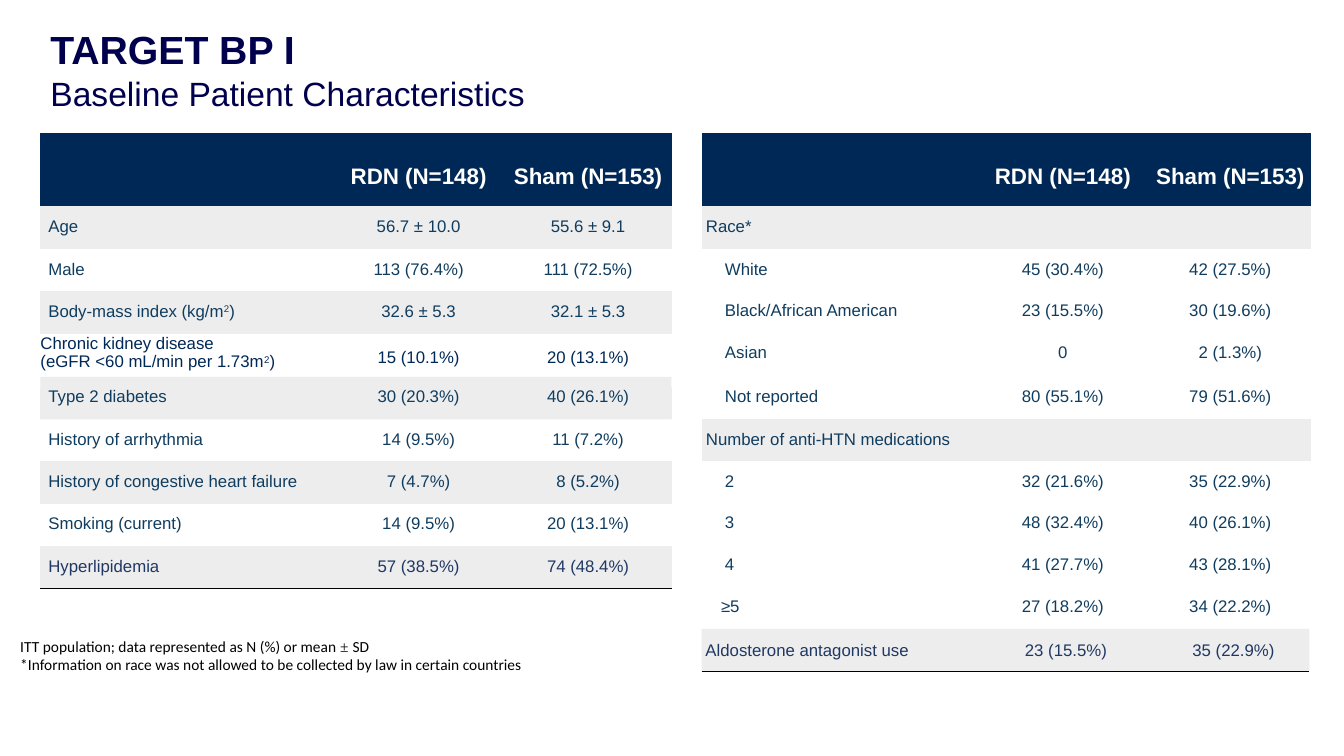
"""Build the baseline patient characteristics slide."""
from dataclasses import dataclass

from lxml.etree import SubElement
from pptx import Presentation
from pptx.dml.color import RGBColor
from pptx.enum.shapes import MSO_CONNECTOR, MSO_SHAPE
from pptx.enum.text import MSO_ANCHOR, PP_ALIGN
from pptx.oxml import parse_xml
from pptx.oxml.ns import nsdecls, qn
from pptx.slide import Slide
from pptx.table import Table, _Cell as Cell
from pptx.text.text import TextFrame, _Paragraph as Paragraph
from pptx.util import Cm, Pt

NAVY, TEAL, INDIGO, BAND = "002856", "103D5F", "203864", "EDEDED"
NO_GRID_STYLE = "{2D5ABB26-0587-4C30-8999-92F81FD0307C}"
COLUMN_WIDTHS = (7.14, 4.45, 4.32, 0.76, 6.81, 4.32, 4.22)
ROW_HEIGHTS = (1.85, 1.07, 1.07, 1.07, 1.35, 0.79, 1.07, 1.07, 1.07, 1.07, 0.76)
TABLE_LEFT, TABLE_TOP = 1.02, 3.35
LAST_LEFT_ROW = 9


@dataclass(frozen=True)
class Style:
    """Look of a paragraph; spans between bars take odd_face or are raised."""

    size: float
    color: str
    face: str = "Arial"
    bold: bool = False
    odd_face: str = ""


@dataclass(frozen=True)
class Row:
    """One line of a half table, lengths in centimetres."""

    label: str
    values: tuple[str, str] = ("", "")
    top: float = 0.28
    indent: float = 0.2
    band: bool = False
    label_color: str = TEAL
    value_color: str = TEAL


@dataclass(frozen=True)
class Half:
    """One side of the table."""

    column: int
    value_indents: tuple[float, float]
    rows: tuple[Row, ...]


@dataclass(frozen=True)
class Strip:
    """A grey band behind a line of text."""

    left: float
    top: float
    width: float
    height: float = 1.07


LEFT = Half(0, (0.33, 0.1), (
    Row("Age", ("56.7 ± 10.0", "55.6 ± 9.1"), band=True),
    Row("Male", ("113 (76.4%)", "111 (72.5%)")),
    Row("Body-mass index (kg/m|2|)", ("32.6 ± 5.3", "32.1 ± 5.3"), band=True),
    Row("Chronic kidney disease\n(eGFR <60 mL/min per 1.73m|2|)", ("15 (10.1%)", "20 (13.1%)"),
        top=0.36, indent=0, label_color=NAVY, value_color=NAVY),
    Row("Type 2 diabetes", ("30 (20.3%)", "40 (26.1%)"), top=0, band=True),
    Row("History of arrhythmia", ("14 (9.5%)", "11 (7.2%)")),
    Row("History of congestive heart failure", ("7 (4.7%)", "8 (5.2%)"), band=True),
    Row("Smoking (current)", ("14 (9.5%)", "20 (13.1%)")),
    Row("Hyperlipidemia", ("57 (38.5%)", "74 (48.4%)"), band=True,
        label_color=INDIGO, value_color=INDIGO),
))
RIGHT = Half(4, (0.25, 0.15), (
    Row("Race*", indent=0.1, band=True),
    Row("White", ("45 (30.4%)", "42 (27.5%)"), indent=0.58),
    Row("Black/African American", ("23 (15.5%)", "30 (19.6%)"), top=0.25, indent=0.58),
    Row("Asian", ("0", "2 (1.3%)"), top=0.25, indent=0.58),
    Row("Not reported", ("80 (55.1%)", "79 (51.6%)"), top=0, indent=0.58),
    Row("Number of anti-HTN medications", indent=0.1, band=True),
    Row("2", ("32 (21.6%)", "35 (22.9%)"), indent=0.58),
    Row("3", ("48 (32.4%)", "40 (26.1%)"), top=0.25, indent=0.58),
    Row("4", ("41 (27.7%)", "43 (28.1%)"), top=0.23, indent=0.58),
    Row("≥5", ("27 (18.2%)", "34 (22.2%)"), top=0.23, indent=0.48),
))
STRIPS = (Strip(TABLE_LEFT, 9.5, 15.9), Strip(17.68, 15.85, 15.32))


def paint(target, color: str) -> None:
    """Give a fill, line or font one solid colour."""
    if hasattr(target, "solid"):
        target.solid()
    holder = target.fore_color if hasattr(target, "fore_color") else target.color
    holder.rgb = RGBColor.from_string(color)


def style_paragraph(para: Paragraph, style: Style) -> None:
    """Set the font of a whole paragraph."""
    para.font.size, para.font.name, para.font.bold = Pt(style.size), style.face, style.bold
    paint(para.font, style.color)


def write(frame: TextFrame, text: str, styles: tuple[Style, ...], align=PP_ALIGN.LEFT) -> None:
    """Fill a frame, one paragraph per line, the last style serving the rest."""
    for index, line in enumerate(text.split("\n")):
        para = frame.add_paragraph() if index else frame.paragraphs[0]
        para.alignment = align
        style = styles[min(index, len(styles) - 1)]
        style_paragraph(para, style)
        for position, part in enumerate(line.split("|") if line else ()):
            span = para.add_run()
            span.text = part
            if position % 2 and style.odd_face:
                span.font.name = style.odd_face
            elif position % 2:
                span._r.get_or_add_rPr().set("baseline", "28000")


def set_margins(target: TextFrame | Cell, left: float = 0, top: float = 0) -> None:
    """Keep only the left and top insets."""
    target.margin_left, target.margin_top = Cm(left), Cm(top)
    target.margin_right = target.margin_bottom = 0


def fill_cell(cell: Cell, text: str, style: Style, left: float, top: float, color: str,
              align=PP_ALIGN.CENTER) -> None:
    """Write and colour one table cell."""
    set_margins(cell, left, top)
    write(cell.text_frame, text, (style,), align)
    if color:
        paint(cell.fill, color)


def draw_half(table: Table, half: Half) -> None:
    """Fill the header and rows of one side."""
    header = Style(16, "FFFFFF", bold=True)
    fill_cell(table.cell(0, half.column), "", header, 0, 0, NAVY)
    for offset, text in enumerate(("RDN (N=148)", "Sham (N=153)")):
        fill_cell(table.cell(0, half.column + offset + 1), text, header,
                  half.value_indents[offset], 0.79, NAVY)
    for number, row in enumerate(half.rows, 1):
        color = BAND if row.band else ""
        label_top = row.top if row.indent else 0
        fill_cell(table.cell(number, half.column), row.label, Style(12, row.label_color),
                  row.indent, label_top, color, PP_ALIGN.LEFT)
        for offset, text in enumerate(row.values):
            fill_cell(table.cell(number, half.column + offset + 1), text,
                      Style(12, row.value_color), half.value_indents[offset], row.top, color)


def draw_border(cell: Cell, edge: str) -> None:
    """Rule one edge of a cell in black."""
    cell._tc.get_or_add_tcPr().insert(0, parse_xml(
        f'<a:{edge} {nsdecls("a")} w="12700"><a:solidFill><a:srgbClr val="000000"/>'
        f"</a:solidFill></a:{edge}>"))


def draw_table(page: Slide) -> None:
    """Add the table with both halves."""
    table = page.shapes.add_table(
        len(ROW_HEIGHTS), len(COLUMN_WIDTHS), Cm(TABLE_LEFT), Cm(TABLE_TOP),
        Cm(sum(COLUMN_WIDTHS)), Cm(sum(ROW_HEIGHTS))).table
    table.first_row = table.horz_banding = False
    table._tbl.tblPr.find(qn("a:tableStyleId")).text = NO_GRID_STYLE
    for column, width in zip(table.columns, COLUMN_WIDTHS):
        column.width = Cm(width)
    for row, height in zip(table.rows, ROW_HEIGHTS):
        row.height = Cm(height)
    for cell in table.iter_cells():
        set_margins(cell)
        cell.fill.background()
        style_paragraph(cell.text_frame.paragraphs[0], Style(12, TEAL))
    for half in (LEFT, RIGHT):
        draw_half(table, half)
    for column in range(3):
        draw_border(table.cell(LAST_LEFT_ROW, column), "lnB")
        draw_border(table.cell(LAST_LEFT_ROW + 1, column), "lnT")


def draw_strip(page: Slide, strip: Strip) -> None:
    """Add one grey band."""
    box = page.shapes.add_shape(MSO_SHAPE.RECTANGLE, Cm(strip.left), Cm(strip.top),
                                Cm(strip.width), Cm(strip.height))
    box.shadow.inherit = False
    paint(box.fill, BAND)
    box.line.fill.background()


def add_box(page: Slide, left: float, top: float, width: float, height: float) -> TextFrame:
    """Add a wrapping text box and return its frame."""
    frame = page.shapes.add_textbox(Cm(left), Cm(top), Cm(width), Cm(height)).text_frame
    frame.word_wrap = True
    return frame


def draw_title(page: Slide) -> None:
    """Place the two-line title."""
    title = page.shapes.title
    title.left, title.top, title.width, title.height = Cm(1.24), Cm(0.61), Cm(13), Cm(2.29)
    frame = title.text_frame
    frame.vertical_anchor = MSO_ANCHOR.TOP
    set_margins(frame, 0.03, 0.03)
    write(frame, "TARGET BP I\nBaseline Patient Characteristics",
          (Style(28, "00004D", bold=True), Style(24, "00004D")))


def draw_last_row(page: Slide) -> None:
    """Add the tabbed line and the rule that close the right half."""
    strip = STRIPS[1]
    bottom = Cm(strip.top + strip.height)
    rule = page.shapes.add_connector(MSO_CONNECTOR.STRAIGHT, Cm(strip.left), bottom,
                                     Cm(strip.left + strip.width), bottom)
    paint(rule.line.fill, "000000")
    rule.line.width = Pt(1)
    SubElement(rule._element.spPr, qn("a:effectLst"))
    frame = add_box(page, strip.left, 16.1, strip.width, 0.58)
    set_margins(frame, 0.1, 0.03)
    tabs = SubElement(frame.paragraphs[0]._p.get_or_add_pPr(), qn("a:tabLst"))
    for stop in (8.05, 12.27):
        SubElement(tabs, qn("a:tab"), pos=str(Cm(stop)), algn="l")
    write(frame, "Aldosterone antagonist use\t23 (15.5%)\t35 (22.9%)", (Style(12, INDIGO),))


def draw_footnote(page: Slide) -> None:
    """Add the two notes under the left half."""
    frame = add_box(page, 0.48, 16, 13.2, 1.04)
    set_margins(frame, 0.03, 0.05)
    write(frame, "ITT population; data represented as N (%) or mean |± |SD\n"
          "*Information on race was not allowed to be collected by law in certain countries",
          (Style(11, "000000", "Calibri", odd_face="Times New Roman"),))


def main() -> None:
    """Build and save the deck."""
    deck = Presentation()
    deck.slide_width, deck.slide_height = Cm(33.87), Cm(19.05)
    page = deck.slides.add_slide(deck.slide_layouts[5])
    draw_title(page)
    for strip in STRIPS:
        draw_strip(page, strip)
    draw_table(page)
    draw_footnote(page)
    draw_last_row(page)
    deck.save("out.pptx")


if __name__ == "__main__":
    main()
